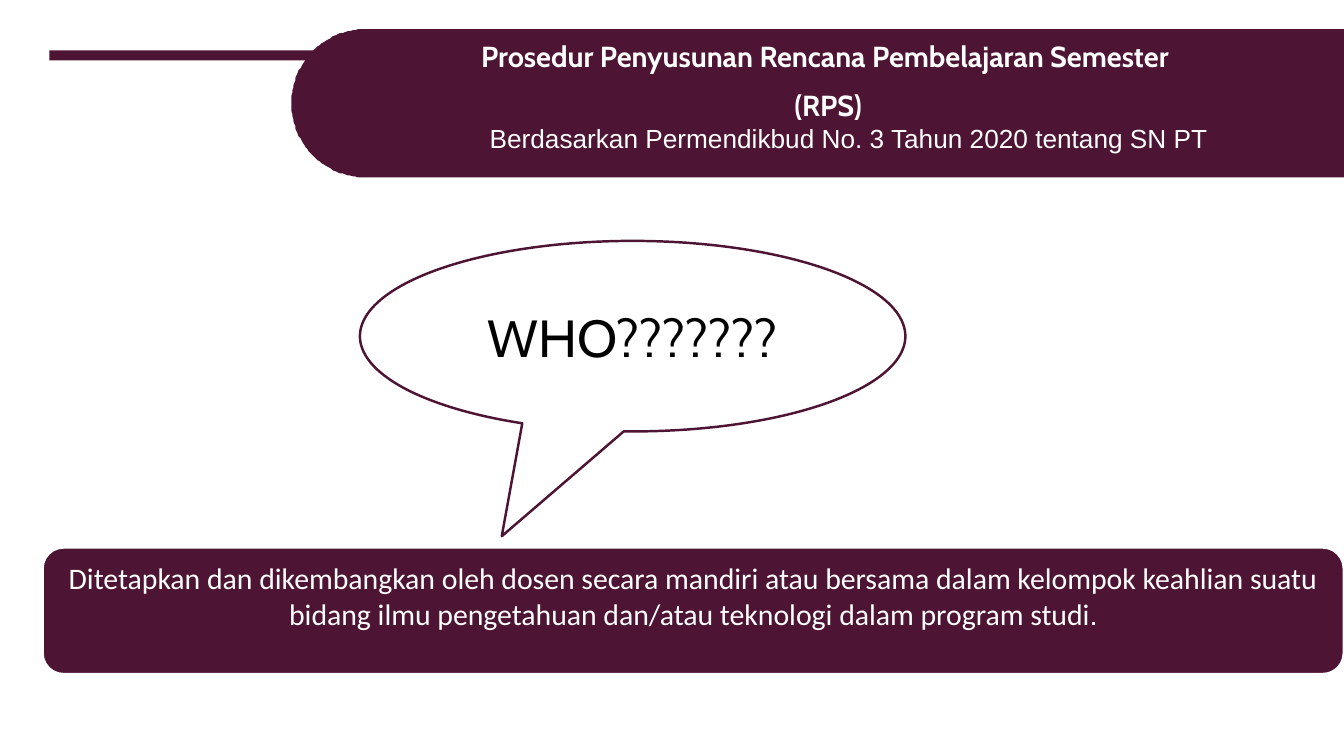
import math

from pptx import Presentation
from pptx import util as u
from pptx.dml.color import RGBColor
from pptx.enum import shapes, text
from pptx.oxml import xmlchemy

PX = 9144
PLUM = RGBColor(0x4D, 0x14, 0x34)
WHITE = RGBColor(0xFF, 0xFF, 0xFF)
BLACK = RGBColor(0, 0, 0)


def box(*lengths):
    return [length * PX for length in lengths]


def paint(shape, fill, line=None, width=0):
    shape.shadow.inherit = False
    shape.fill.solid()
    shape.fill.fore_color.rgb = fill
    if line is None:
        shape.line.fill.background()
    else:
        shape.line.color.rgb = line
        shape.line.width = u.Pt(width)


def style(font, name, size, color, bold=False):
    font.name, font.size, font.bold = name, u.Pt(size), bold
    font.color.rgb = color


def add_shape(slide, kind, place, fill, line=None, width=0):
    shape = slide.shapes.add_shape(kind, *box(*place))
    paint(shape, fill, line, width)
    return shape


def add_banner(slide, left, top, right, bottom):
    radius = (bottom - top) / 2
    arc = []
    for degrees in range(90, 271, 2):
        angle = math.radians(degrees)
        arc.append((left + radius + radius * math.cos(angle),
                    top + radius + radius * math.sin(angle)))
    builder = slide.shapes.build_freeform(right, top, scale=PX)
    builder.add_line_segments([(right, bottom)] + arc)
    banner = builder.convert_to_shape()
    paint(banner, PLUM)
    return banner


def fill_placeholder(placeholder, place, lines, name, size, bold=False):
    placeholder.left, placeholder.top, placeholder.width, placeholder.height = box(*place)
    frame = placeholder.text_frame
    frame.text = "\n".join(lines)
    frame.auto_size = text.MSO_AUTO_SIZE.NONE
    frame.vertical_anchor = text.MSO_ANCHOR.MIDDLE
    for paragraph in frame.paragraphs:
        paragraph.alignment = text.PP_ALIGN.CENTER
        paragraph.space_before = u.Pt(round(size * 0.2, 1))
        paragraph.space_after = u.Pt(6)
        style(paragraph.font, name, size, WHITE, bold)
        properties = paragraph.font._element.getparent()
        properties.set("marL", "0")
        properties.set("indent", "0")
        bullet = xmlchemy.OxmlElement("a:buNone")
        paragraph.font._element.addprevious(bullet)


def write(shape, runs, size, color):
    frame = shape.text_frame
    frame.word_wrap = True
    frame.vertical_anchor = text.MSO_ANCHOR.MIDDLE
    paragraph = frame.paragraphs[0]
    paragraph.alignment = text.PP_ALIGN.CENTER
    for words, name in runs:
        run = paragraph.add_run()
        run.text = words
        style(run.font, name, size, color)


def main():
    presentation = Presentation()
    presentation.slide_width, presentation.slide_height = box(1333, 750)
    slide = presentation.slides.add_slide(presentation.slide_layouts[1])
    title, subtitle = slide.placeholders

    rule = add_shape(slide, shapes.MSO_SHAPE.RECTANGLE, (49, 50, 405, 10), PLUM)
    banner = add_banner(slide, 289, 29, 1333, 176)
    for backdrop in (rule, banner):
        title.element.addprevious(backdrop.element)

    fill_placeholder(title, (310, 38, 1023, 84),
                     ["Prosedur Penyusunan Rencana Pembelajaran Semester ", "(RPS)"],
                     "Cabin", 20.7, True)
    fill_placeholder(subtitle, (357, 116, 976, 42),
                     ["Berdasarkan Permendikbud No. 3 Tahun 2020 tentang SN PT "],
                     "Arial", 18.7)

    answer = add_shape(slide, shapes.MSO_SHAPE.ROUNDED_RECTANGLE,
                       (42, 543, 1291, 126), PLUM, WHITE, 2)
    answer.text_frame.margin_bottom = 35 * PX
    write(answer, [
        ("Ditetapkan dan dikembangkan oleh dosen secara mandiri atau bersama dalam "
         "kelompok keahlian suatu bidang ilmu pengetahuan dan/atau teknologi dalam "
         "program studi", "Calibri"),
        (".", "Roboto Slab")], 21.3, WHITE)

    question = add_shape(slide, shapes.MSO_SHAPE.OVAL_CALLOUT,
                         (357, 239, 541, 189), WHITE, PLUM, 1.75)
    question.adjustments[0] = -0.24
    question.adjustments[1] = 1.05
    write(question, [("WHO???????", "Cabin")], 37.3, BLACK)

    presentation.save("out.pptx")


if __name__ == "__main__":
    main()
